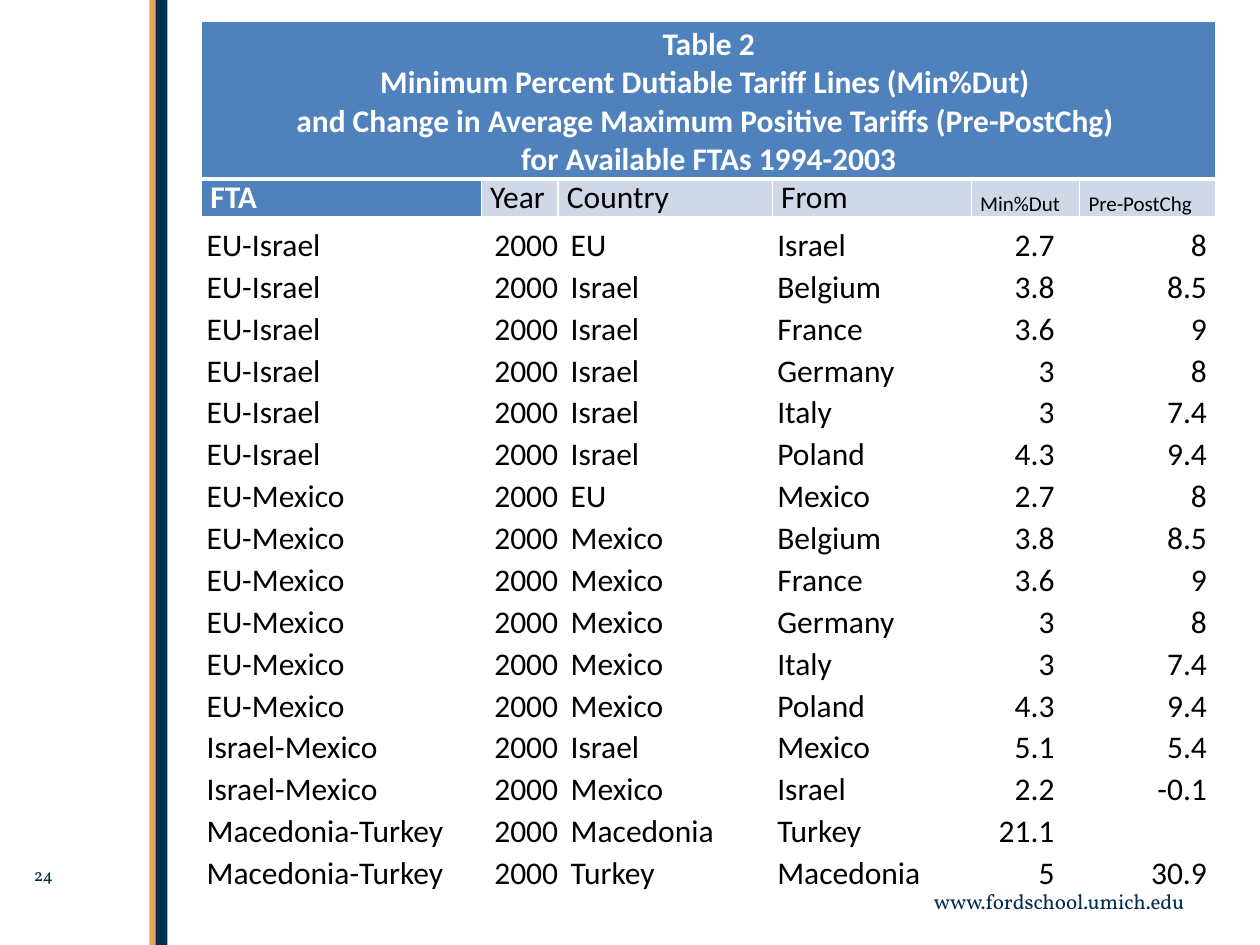
from pptx import Presentation, util as u
from pptx.dml.color import RGBColor
from pptx.enum import shapes, text
from pptx.oxml import parse_xml
from pptx.oxml.ns import nsdecls, qn

NAVY, GOLD, BLUE, PALE = "002F52", "E3A856", "4F81BD", "D0D8E8"
WHITE, BLACK = "FFFFFF", "000000"
LEFT, CENTER, RIGHT = text.PP_ALIGN.LEFT, text.PP_ALIGN.CENTER, text.PP_ALIGN.RIGHT
NO_STYLE = "{2D5ABB26-0587-4C30-8999-92F81FD0307C}"


def color(hex_code):
    return RGBColor.from_string(hex_code)


def write(frame, lines, size, font, hex_code, align=LEFT, bold=False):
    for number, line in enumerate(lines):
        para = frame.add_paragraph() if number else frame.paragraphs[0]
        para.alignment = align
        span = para.add_run()
        span.text = line
        span.font.size, span.font.name, span.font.bold = u.Pt(size), font, bold
        span.font.color.rgb = color(hex_code)


deck = Presentation()
deck.slide_width, deck.slide_height = u.Inches(10), u.Inches(7.5)
page = deck.slides.add_slide(deck.slide_layouts[6])
unit = deck.slide_width / 100  # square grid: 100 columns by 75 rows

# Vertical bars at the left
for left, width, fill in [(12.3, 1, NAVY), (11.85, 0.5, GOLD)]:
    bar = page.shapes.add_shape(shapes.MSO_SHAPE.RECTANGLE, int(left * unit), 0,
                                int(width * unit), deck.slide_height)
    bar.shadow.inherit = False
    bar.fill.solid()
    bar.fill.fore_color.rgb = color(fill)
    bar.line.fill.background()

# Web address and page number
for place, words, size, align in [
    ((70, 70, 25, 3), "www.fordschool.umich.edu", 12, RIGHT),
    ((1.7, 68.1, 9.2, 3.4), "24", 10, LEFT),
]:
    box = page.shapes.add_textbox(*[int(length * unit) for length in place])
    box.text_frame.word_wrap = True
    write(box.text_frame, [words], size, "Vollkorn", NAVY, align)

# Table contents
title = [
    "Table 2",
    "Minimum Percent Dutiable Tariff Lines (Min%Dut) ",
    "and Change in Average Maximum Positive Tariffs (Pre-PostChg) ",
    "for Available FTAs 1994-2003",
]
headings = ["FTA", "Year", "Country", "From", "Min%Dut", "Pre-PostChg"]
tariffs = [
    ("EU-Israel", "EU", "Israel", "2.7", "8"),
    ("EU-Israel", "Israel", "Belgium", "3.8", "8.5"),
    ("EU-Israel", "Israel", "France", "3.6", "9"),
    ("EU-Israel", "Israel", "Germany", "3", "8"),
    ("EU-Israel", "Israel", "Italy", "3", "7.4"),
    ("EU-Israel", "Israel", "Poland", "4.3", "9.4"),
    ("EU-Mexico", "EU", "Mexico", "2.7", "8"),
    ("EU-Mexico", "Mexico", "Belgium", "3.8", "8.5"),
    ("EU-Mexico", "Mexico", "France", "3.6", "9"),
    ("EU-Mexico", "Mexico", "Germany", "3", "8"),
    ("EU-Mexico", "Mexico", "Italy", "3", "7.4"),
    ("EU-Mexico", "Mexico", "Poland", "4.3", "9.4"),
    ("Israel-Mexico", "Israel", "Mexico", "5.1", "5.4"),
    ("Israel-Mexico", "Mexico", "Israel", "2.2", "-0.1"),
    ("Macedonia-Turkey", "Macedonia", "Turkey", "21.1", ""),
    ("Macedonia-Turkey", "Turkey", "Macedonia", "5", "30.9"),
]

# Empty tables: left, top, column widths, row heights, side margin
tables = []
for left, top, widths, heights, margin in [
    (16, 1.7, [22.2, 6.1, 17, 15.8, 8.6, 10.8], [12.5, 2.4], 0.7),
    (15.9, 17.7, [22.2, 6.7, 16.4, 15.8, 7.2, 12.1], [3.325] * len(tariffs), 0.5),
]:
    holder = page.shapes.add_table(
        len(heights), len(widths), int(left * unit), int(top * unit),
        int(sum(widths) * unit), int(sum(heights) * unit))
    table = holder.table
    table.first_row = table.horz_banding = False
    next(holder._element.iter(qn("a:tableStyleId"))).text = NO_STYLE
    for column, width in zip(table.columns, widths):
        column.width = int(width * unit)
    for row, height in zip(table.rows, heights):
        row.height = int(height * unit)
    for cell in table.iter_cells():
        cell.margin_left = cell.margin_right = int(margin * unit)
        cell.margin_top = cell.margin_bottom = 0
        cell.vertical_anchor = text.MSO_ANCHOR.BOTTOM
    tables.append(table)
heading_table, tariff_table = tables

# Title and column headings, with white borders
for row_index in range(2):
    for column_index, heading in enumerate(headings):
        cell = heading_table.cell(row_index, column_index)
        for side in "LRTB":
            thick = (row_index, side) in [(0, "B"), (1, "T")]
            cell._tc.get_or_add_tcPr().append(parse_xml(
                f'<a:ln{side} {nsdecls("a")} w="{u.Pt(3 if thick else 1)}"><a:solidFill>'
                f'<a:srgbClr val="{WHITE}"/></a:solidFill></a:ln{side}>'))
        strong = row_index == 0 or column_index == 0
        cell.fill.solid()
        cell.fill.fore_color.rgb = color(BLUE if strong else PALE)
        if row_index == 1:
            write(cell.text_frame, [heading], 12 if column_index > 3 else 18,
                  "Calibri", WHITE if strong else BLACK, bold=strong)
heading_table.cell(0, 0).merge(heading_table.cell(0, 5))
write(heading_table.cell(0, 0).text_frame, title, 18, "Calibri", WHITE, CENTER, True)

# Tariff rows, numbers to the right
for row_index, (agreement, *rest) in enumerate(tariffs):
    for column_index, value in enumerate([agreement, "2000", *rest]):
        cell = tariff_table.cell(row_index, column_index)
        cell.fill.background()
        if value:
            write(cell.text_frame, [value], 18, "Calibri", BLACK,
                  RIGHT if column_index in (1, 4, 5) else LEFT)

deck.save("out.pptx")
